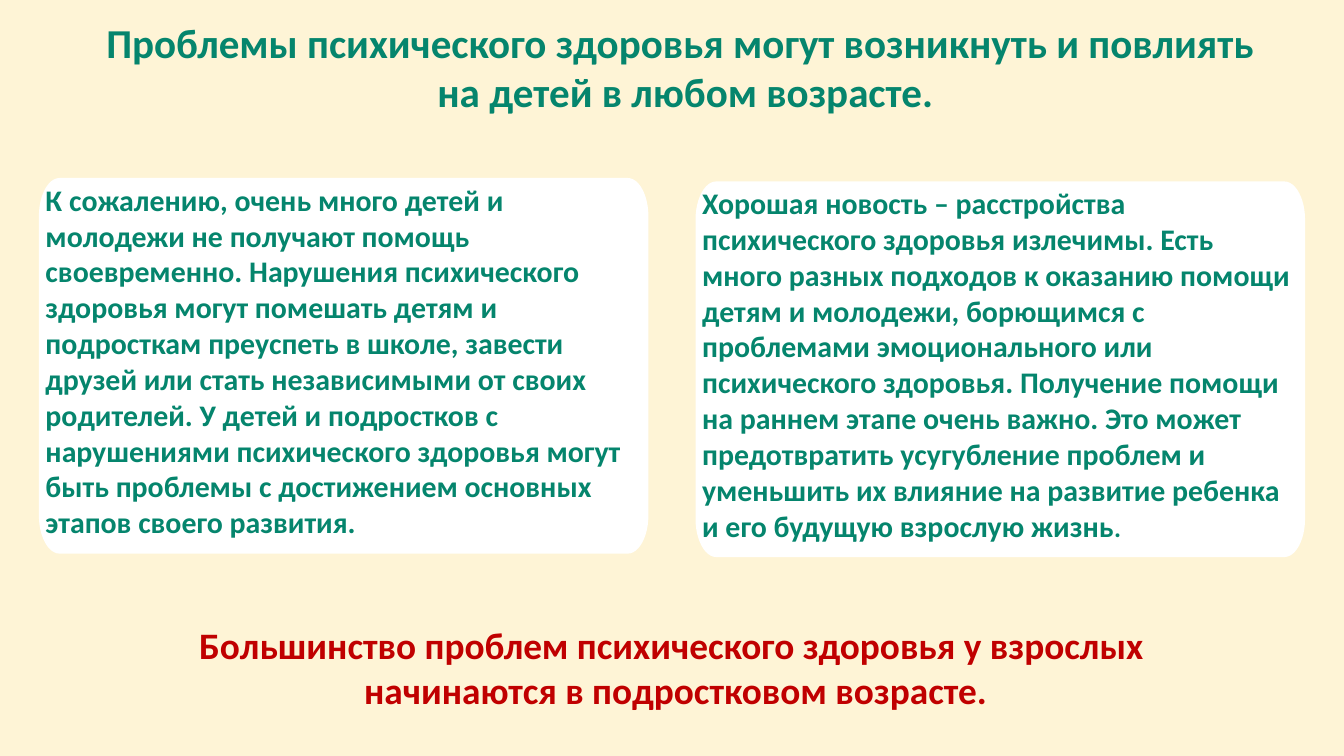
from pptx import Presentation
from pptx.dml.color import RGBColor
from pptx.enum.text import MSO_ANCHOR, MSO_AUTO_SIZE, PP_ALIGN
from pptx.util import Cm, Pt

TOP = MSO_ANCHOR.TOP
LEFT, CENTER = PP_ALIGN.LEFT, PP_ALIGN.CENTER
NO_FIT = MSO_AUTO_SIZE.NONE
FONT = "Calibri"
GREEN, RED, WHITE, CREAM = "05856D", "C00000", "FFFFFF", "FEF4D6"
CORNER_W, CORNER_H, CORNER_STEPS = 0.78, 1.45, 12
KAPPA = 0.55

TITLE = ["Проблемы психического здоровья могут возникнуть и повлиять ",
         "на детей в любом возрасте."]
CONCLUSION = ["Большинство проблем психического здоровья у взрослых ",
              "начинаются в подростковом возрасте."]
PROBLEM = [("К сожалению, очень много детей и молодежи не получают помощь "
            "своевременно. Нарушения психического здоровья могут помешать детям "
            "и подросткам преуспеть в школе, завести друзей или стать "
            "независимыми от своих родителей. У детей и подростков с нарушениями "
            "психического здоровья могут быть проблемы с достижением основных "
            "этапов своего развития.", 32)]
GOOD_NEWS = [("Хорошая новость – расстройства психического здоровья излечимы. "
              "Есть много разных подходов к оказанию помощи детям и молодежи, "
              "борющимся с проблемами эмоционального или психического здоровья. "
              "Получение помощи на раннем этапе очень важно. Это может "
              "предотвратить усугубление проблем и уменьшить их влияние на "
              "развитие ребенка и его будущую взрослую жизнь", 32), (".", 28)]


def paint(fill, color):
    fill.solid()
    fill.fore_color.rgb = RGBColor.from_string(color)


def write(tf, paragraphs, color, align):
    tf.word_wrap = True
    tf.auto_size = NO_FIT
    tf.vertical_anchor = TOP
    for i, runs in enumerate(paragraphs):
        p = tf.add_paragraph() if i else tf.paragraphs[0]
        p.alignment = align
        for text, size in runs:
            r = p.add_run()
            r.text = text
            r.font.name, r.font.size, r.font.bold = FONT, Pt(size), True
            r.font.color.rgb = RGBColor.from_string(color)


def rounded_outline(x, y, w, h):
    corners = [(x + w, y + h, 0, 1), (x, y + h, 1, 0),
               (x, y, 0, 1), (x + w, y, 1, 0)]
    points = []
    for cx, cy, start_on_x, _ in corners:
        dx = CORNER_W if cx == x else -CORNER_W
        dy = CORNER_H if cy == y else -CORNER_H
        for i in range(CORNER_STEPS + 1):
            t = i / CORNER_STEPS
            u = 1 - t
            near = u ** 3 + 3 * u * u * t * (1 - KAPPA)
            far = t ** 3 + 3 * u * t * t * (1 - KAPPA)
            px, py = (near, far) if start_on_x else (far, near)
            points.append((Cm(cx + dx * px), Cm(cy + dy * py)))
    return points


def add_card(s, x, y, w, h, runs):
    points = rounded_outline(x, y, w, h)
    builder = s.shapes.build_freeform(*points[0])
    builder.add_line_segments(points[1:], close=True)
    sp = builder.convert_to_shape()
    sp.shadow.inherit = False
    paint(sp.fill, WHITE)
    sp.line.fill.background()
    write(sp.text_frame, [runs], GREEN, LEFT)


def add_title(s, x, y, w, h):
    sp = s.shapes.title
    sp.left, sp.top, sp.width, sp.height = Cm(x), Cm(y), Cm(w), Cm(h)
    write(sp.text_frame, [[(line, 44)] for line in TITLE], GREEN, CENTER)


def add_conclusion(s, x, y, w, h):
    sp = s.shapes.add_textbox(Cm(x), Cm(y), Cm(w), Cm(h))
    write(sp.text_frame, [[(line, 40)] for line in CONCLUSION], RED, CENTER)


def main():
    prs = Presentation()
    prs.slide_width, prs.slide_height = Cm(50.8), Cm(28.58)
    s = prs.slides.add_slide(prs.slide_layouts[5])
    paint(s.background.fill, CREAM)
    add_card(s, 1.47, 6.73, 23.04, 14.2, PROBLEM)
    add_conclusion(s, 1.52, 23.39, 48.03, 4.65)
    add_card(s, 26.29, 6.86, 23.04, 14.2, GOOD_NEWS)
    add_title(s, 1.9, 0.53, 48.03, 3.81)
    prs.save("out.pptx")


if __name__ == "__main__":
    main()
